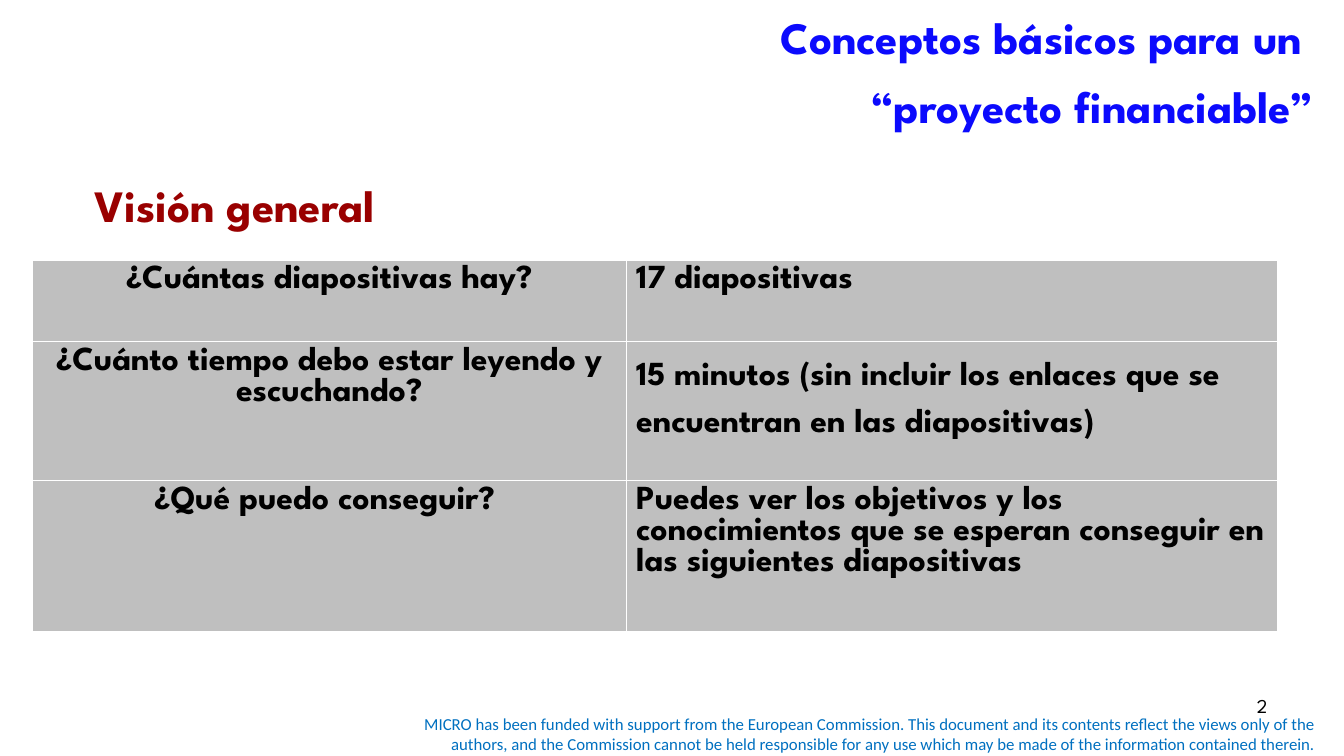
from pptx import Presentation
from pptx.dml.color import RGBColor
from pptx.enum.text import MSO_ANCHOR, MSO_AUTO_SIZE, PP_ALIGN
from pptx.util import Inches, Pt

LEFT, CENTER, RIGHT = PP_ALIGN.LEFT, PP_ALIGN.CENTER, PP_ALIGN.RIGHT
TOP, MIDDLE = MSO_ANCHOR.TOP, MSO_ANCHOR.MIDDLE
NO_AUTOFIT = MSO_AUTO_SIZE.NONE
TITLE_ONLY = 5

COLORS = {
    "title": "0B0AFD",
    "heading": "990000",
    "notice": "0070C0",
    "text": "000000",
    "cell": "BFBFBF",
}
DISPLAY_FONT = "League Spartan"
NOTICE_FONT = "Calibri"

TITLE = "Conceptos básicos para un \v“proyecto financiable”"
NOTICE = (
    "MICRO has been funded with support from the European Commission. "
    "This document and its contents reflect the views only of the authors, "
    "and the Commission cannot be held responsible for any use which may be "
    "made of the information contained therein."
)
COLUMN_WIDTHS = (5.89, 6.46)
ROW_HEIGHTS = (0.81, 1.38, 1.5)
QUESTIONS = (
    ("¿Cuántas diapositivas hay?", "17 diapositivas", 1.0),
    (
        "¿Cuánto tiempo debo estar leyendo y escuchando?",
        "15 minutos (sin incluir los enlaces que se encuentran en las diapositivas)",
        1.5,
    ),
    (
        "¿Qué puedo conseguir? ",
        "Puedes ver los objetivos y los conocimientos que se esperan conseguir "
        "en las siguientes diapositivas",
        1.0,
    ),
)


def write_text(frame, text, size, color, align=LEFT, bold=False,
               font=DISPLAY_FONT, spacing=1.0):
    frame.text = text
    frame.word_wrap = True
    para = frame.paragraphs[0]
    para.alignment = align
    para.line_spacing = spacing
    for run in para.runs:
        run.font.name = font
        run.font.size = Pt(size)
        run.font.bold = bold
        run.font.color.rgb = RGBColor.from_string(COLORS[color])


def add_title(page, box):
    title = page.shapes.title
    title.left, title.top, title.width, title.height = map(Inches, box)
    write_text(title.text_frame, TITLE, 32, "title", RIGHT, True, spacing=1.3)
    title.text_frame.auto_size = NO_AUTOFIT
    title.text_frame.vertical_anchor = MIDDLE


def add_label(page, box, text, size, color, anchor=TOP, **style):
    label = page.shapes.add_textbox(*map(Inches, box))
    write_text(label.text_frame, text, size, color, **style)
    label.text_frame.vertical_anchor = anchor


def add_question_table(page, box):
    frame = page.shapes.add_table(
        len(QUESTIONS), len(COLUMN_WIDTHS), *map(Inches, box))
    table = frame.table
    for column, width in zip(table.columns, COLUMN_WIDTHS):
        column.width = Inches(width)
    for row, height, (question, answer, spacing) in zip(
            table.rows, ROW_HEIGHTS, QUESTIONS):
        row.height = Inches(height)
        entries = ((question, CENTER, 1.0), (answer, LEFT, spacing))
        for cell, (text, align, line_spacing) in zip(row.cells, entries):
            cell.fill.solid()
            cell.fill.fore_color.rgb = RGBColor.from_string(COLORS["cell"])
            write_text(cell.text_frame, text, 24, "text", align, True,
                       spacing=line_spacing)


def build_overview(deck):
    page = deck.slides.add_slide(deck.slide_layouts[TITLE_ONLY])
    add_title(page, (1.14, 0, 12, 1.25))
    add_label(page, (3.75, 7.03, 9.4, 0.5), NOTICE, 12, "notice", MIDDLE,
              align=RIGHT, font=NOTICE_FONT)
    add_question_table(
        page, (0.32, 2.58, sum(COLUMN_WIDTHS), sum(ROW_HEIGHTS)))
    add_label(page, (9.56, 6.83, 3.11, 0.52), "2", 14, "text", align=RIGHT)
    add_label(page, (0.84, 1.71, 4.77, 0.64), "Visión general", 32, "heading",
              bold=True)


def main():
    deck = Presentation()
    deck.slide_width = Inches(13.33)
    deck.slide_height = Inches(7.5)
    build_overview(deck)
    deck.save("out.pptx")


if __name__ == "__main__":
    main()
